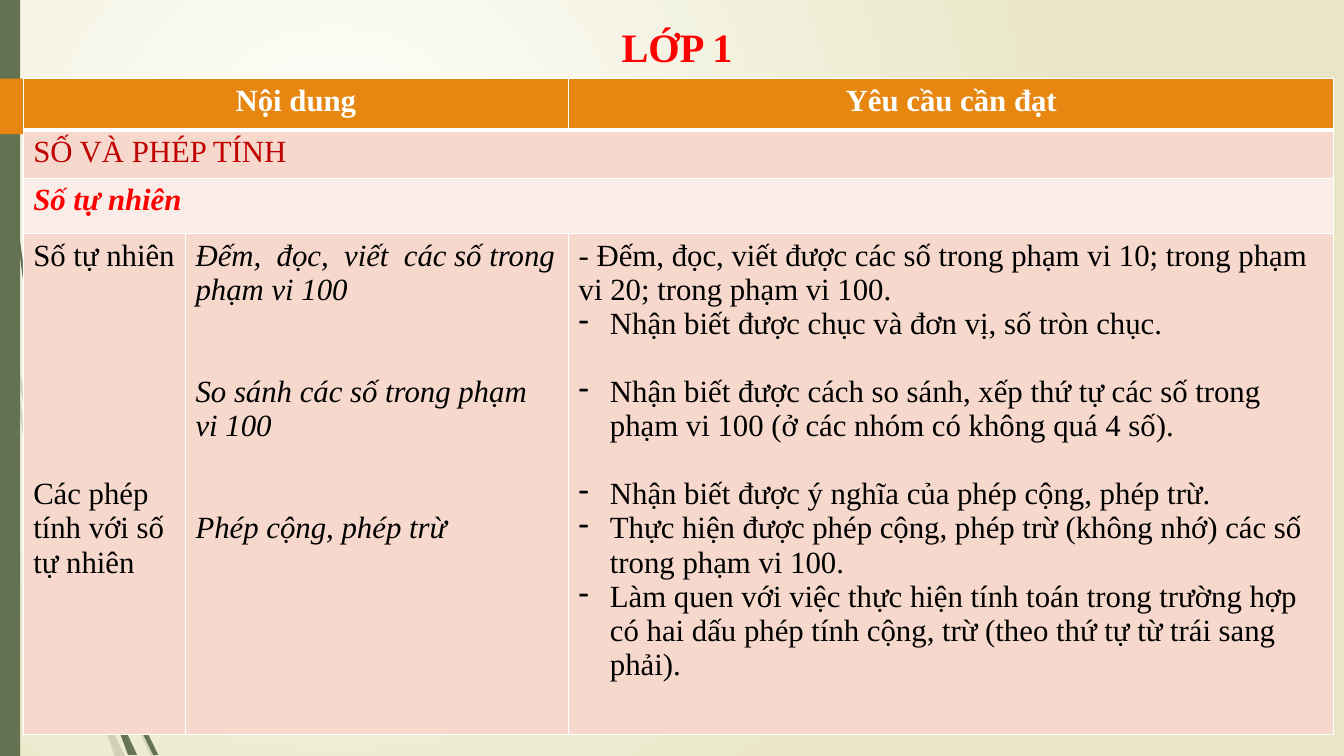
from dataclasses import dataclass

from pptx import Presentation
from pptx.dml.color import RGBColor
from pptx.enum import shapes, text
from pptx.oxml import parse_xml
from pptx.oxml.ns import nsdecls
from pptx.util import Inches, Pt

COLORS = {
    "white": "FFFFFF", "cream": "E8E6C4", "green": "647252", "orange": "E78712",
    "peach": "F6D9CC", "pale": "FAEDE7", "red": "FF0000", "dark red": "C00000",
    "black": "000000",
}
FONT = "Times New Roman"
TEXT_SIZE = 22
LINE_PITCH = 24.35
BULLET_INDENT = 0.31
ALIGN = text.PP_ALIGN


@dataclass
class Line:
    text: str
    lines_before: int = 0
    bullet: bool = False


@dataclass
class Cell:
    row: int
    column: int
    lines: list[Line]
    span: int = 1
    fill: str = "peach"
    color: str = "black"
    bold: bool = False
    italic: bool = False
    align: ALIGN = ALIGN.LEFT


@dataclass
class Wisp:
    points: list[tuple[float, float]]
    opacity: int = 100


WISPS = [
    Wisp([(0.58, 5.22), (0.84, 5.99), (0.85, 5.86), (0.62, 5.2), (0.35, 4.33),
          (0.14, 3.45), (0.17, 3.76), (0.36, 4.5)], 20),
    Wisp([(0.92, 6.07), (0.88, 5.96), (0.88, 6.1), (1.23, 6.94), (1.5, 7.5),
          (1.55, 7.5), (1.27, 6.92)], 20),
    Wisp([(1.19, 7.5), (1.24, 7.5), (1.05, 7.11)], 20),
    Wisp([(0.93, 6.83), (0.7, 6.19), (0.48, 5.45), (0.31, 4.69), (0.17, 3.76),
          (0.11, 3.5), (0.28, 4.7), (0.44, 5.46), (0.65, 6.21), (0.92, 6.93),
          (1.01, 7.14), (0.99, 7.07)], 20),
    Wisp([(1.01, 7.14), (1.14, 7.5), (1.19, 7.5)], 20),
    Wisp([(0.96, 6.92), (0.93, 6.83), (0.99, 7.07), (1.01, 7.14), (1.19, 7.5),
          (1.05, 7.11)], 20),
    Wisp([(0.07, 1.1), (0.17, 2.33), (0.33, 3.55), (0.56, 4.77), (0.57, 4.81),
          (0.55, 4.57), (0.55, 4.53), (0.36, 3.55), (0.19, 2.32), (0.08, 1.09),
          (0.05, 0.48), (0.04, 0), (0.03, 0), (0.04, 0.48)]),
    Wisp([(1.13, 6.49), (1.1, 6.41), (1.11, 6.56), (1.32, 7.08), (1.52, 7.49),
          (1.57, 7.49), (1.36, 7.06)]),
    Wisp([(1.33, 7.49), (1.36, 7.49), (1.22, 7.19)]),
    Wisp([(1.17, 7.22), (1.27, 7.49), (1.31, 7.49)]),
    Wisp([(1.16, 7.06), (1.1, 6.91), (1.16, 7.17), (1.17, 7.22), (1.3, 7.49),
          (1.33, 7.49), (1.22, 7.19)]),
]
PAGE_TAG = [(0, 0.78), (1.48, 0.78), (1.74, 1.06), (1.48, 1.33), (0, 1.33)]

COLUMN_WIDTHS = [1.61, 3.8, 7.59]
ROW_HEIGHTS = [0.51, 0.48, 0.55, 4.97]
HEADER = dict(fill="orange", color="white", bold=True, align=ALIGN.CENTER)
CELLS = [
    Cell(0, 0, [Line("Nội dung")], span=2, **HEADER),
    Cell(0, 2, [Line("Yêu cầu cần đạt")], **HEADER),
    Cell(1, 0, [Line("SỐ VÀ PHÉP TÍNH")], span=3, color="dark red"),
    Cell(2, 0, [Line("Số tự nhiên")], span=3, fill="pale", color="red",
         bold=True, italic=True),
    Cell(3, 0, [Line("Số tự nhiên"), Line("Các phép tính với số tự nhiên", 6)]),
    Cell(3, 1, [
        Line("Đếm,  đọc,  viết  các số trong phạm vi 100"),
        Line("So sánh các số trong phạm  vi 100", 2),
        Line("Phép cộng, phép trừ", 2),
    ], italic=True),
    Cell(3, 2, [
        Line("- Đếm, đọc, viết được các số trong phạm vi 10; trong phạm vi 20; "
             "trong phạm vi 100."),
        Line("Nhận biết được chục và đơn vị, số tròn chục.", bullet=True),
        Line("Nhận biết được cách so sánh, xếp thứ tự các số trong phạm vi 100 "
             "(ở các nhóm có không quá 4 số).", 1, True),
        Line("Nhận biết được ý nghĩa của phép cộng, phép trừ.", 1, True),
        Line("Thực hiện được phép cộng, phép trừ (không nhớ) các số trong "
             "phạm vi 100.", bullet=True),
        Line("Làm quen với việc thực hiện tính toán trong trường hợp có hai dấu "
             "phép tính cộng, trừ (theo thứ tự từ trái sang phải).", bullet=True),
    ]),
]


def rgb(name: str) -> RGBColor:
    return RGBColor.from_string(COLORS[name])


def write(paragraph, content: str, *, size: float = TEXT_SIZE, color: str = "black",
          bold: bool = False, italic: bool = False, align: ALIGN = ALIGN.LEFT,
          space_before: float = 0) -> None:
    paragraph.alignment = align
    paragraph.space_before = Pt(space_before)
    run = paragraph.add_run()
    run.text = content
    run.font.name, run.font.size = FONT, Pt(size)
    run.font.bold, run.font.italic = bold, italic
    run.font.color.rgb = rgb(color)


def add_bullet(paragraph) -> None:
    properties = paragraph._p.get_or_add_pPr()
    properties.set("marL", str(Inches(BULLET_INDENT)))
    properties.set("indent", str(-Inches(BULLET_INDENT)))
    properties.append(parse_xml(f'<a:buChar {nsdecls("a")} char="-"/>'))


def paint_background(slide) -> None:
    fill = slide.background.fill
    fill.gradient()
    for stop, name in zip(fill.gradient_stops, ("white", "cream")):
        stop.color.rgb = rgb(name)
    gradient = slide.element.xpath(".//p:bg//a:gradFill")[0]
    for linear in gradient.xpath("./a:lin"):
        gradient.remove(linear)
    gradient.append(parse_xml(
        f'<a:path {nsdecls("a")} path="circle"><a:fillToRect l="50000" t="50000" '
        'r="100000" b="100000"/></a:path>'))


def paint_shape(shape, color: str, opacity: int = 100) -> None:
    shape.shadow.inherit = False
    shape.fill.solid()
    shape.fill.fore_color.rgb = rgb(color)
    shape.line.fill.background()
    if opacity < 100:
        shape.element.xpath("./p:spPr/a:solidFill/a:srgbClr")[0].append(
            parse_xml(f'<a:alpha {nsdecls("a")} val="{opacity * 1000}"/>'))


def add_outline(slide, points: list[tuple[float, float]], color: str,
                opacity: int = 100) -> None:
    corners = [(Inches(x), Inches(y)) for x, y in points]
    builder = slide.shapes.build_freeform(*corners[0])
    builder.add_line_segments(corners[1:], close=True)
    paint_shape(builder.convert_to_shape(), color, opacity)


def format_cell(cell, fill: str, row: int) -> None:
    """Fill a cell and draw its white borders, heavier below the header row."""
    cell.fill.solid()
    cell.fill.fore_color.rgb = rgb(fill)
    widths = {"L": 1, "R": 1, "T": 3 if row == 1 else 1, "B": 3 if row == 0 else 1}
    properties = cell._tc.get_or_add_tcPr()
    for position, (side, width) in enumerate(widths.items()):
        properties.insert(position, parse_xml(
            f'<a:ln{side} {nsdecls("a")} w="{Pt(width)}"><a:solidFill>'
            f'<a:srgbClr val="{COLORS["white"]}"/></a:solidFill></a:ln{side}>'))


def add_curriculum_table(slide) -> None:
    table = slide.shapes.add_table(
        len(ROW_HEIGHTS), len(COLUMN_WIDTHS), Inches(0.23), Inches(0.78),
        Inches(sum(COLUMN_WIDTHS)), Inches(sum(ROW_HEIGHTS))).table
    table.horz_banding = False
    for column, width in zip(table.columns, COLUMN_WIDTHS):
        column.width = Inches(width)
    for row, height in zip(table.rows, ROW_HEIGHTS):
        row.height = Inches(height)
    for item in CELLS:
        last = item.column + item.span - 1
        for column in range(item.column, last + 1):
            format_cell(table.cell(item.row, column), item.fill, item.row)
        cell = table.cell(item.row, item.column)
        if item.span > 1:
            cell.merge(table.cell(item.row, last))
        for index, line in enumerate(item.lines):
            frame = cell.text_frame
            paragraph = frame.add_paragraph() if index else frame.paragraphs[0]
            write(paragraph, line.text, color=item.color, bold=item.bold,
                  italic=item.italic, align=item.align,
                  space_before=line.lines_before * LINE_PITCH)
            if line.bullet:
                add_bullet(paragraph)


def main() -> None:
    presentation = Presentation()
    presentation.slide_width, presentation.slide_height = Inches(13.33), Inches(7.5)
    slide = presentation.slides.add_slide(presentation.slide_layouts[5])
    paint_background(slide)
    for wisp in WISPS:
        add_outline(slide, wisp.points, "green", wisp.opacity)
    side_bar = slide.shapes.add_shape(
        shapes.MSO_SHAPE.RECTANGLE, 0, 0, Inches(0.2), Inches(7.5))
    paint_shape(side_bar, "green")
    add_outline(slide, PAGE_TAG, "orange")

    title = slide.shapes.title
    title.left, title.top = Inches(2.25), Inches(0.17)
    title.width, title.height = Inches(8.83), Inches(0.58)
    title.text_frame.auto_size = text.MSO_AUTO_SIZE.NONE
    title.text_frame.vertical_anchor = text.MSO_ANCHOR.BOTTOM
    write(title.text_frame.paragraphs[0], " LỚP 1", size=28.8, color="red",
          bold=True, align=ALIGN.CENTER)
    add_curriculum_table(slide)
    presentation.save("out.pptx")


if __name__ == "__main__":
    main()
